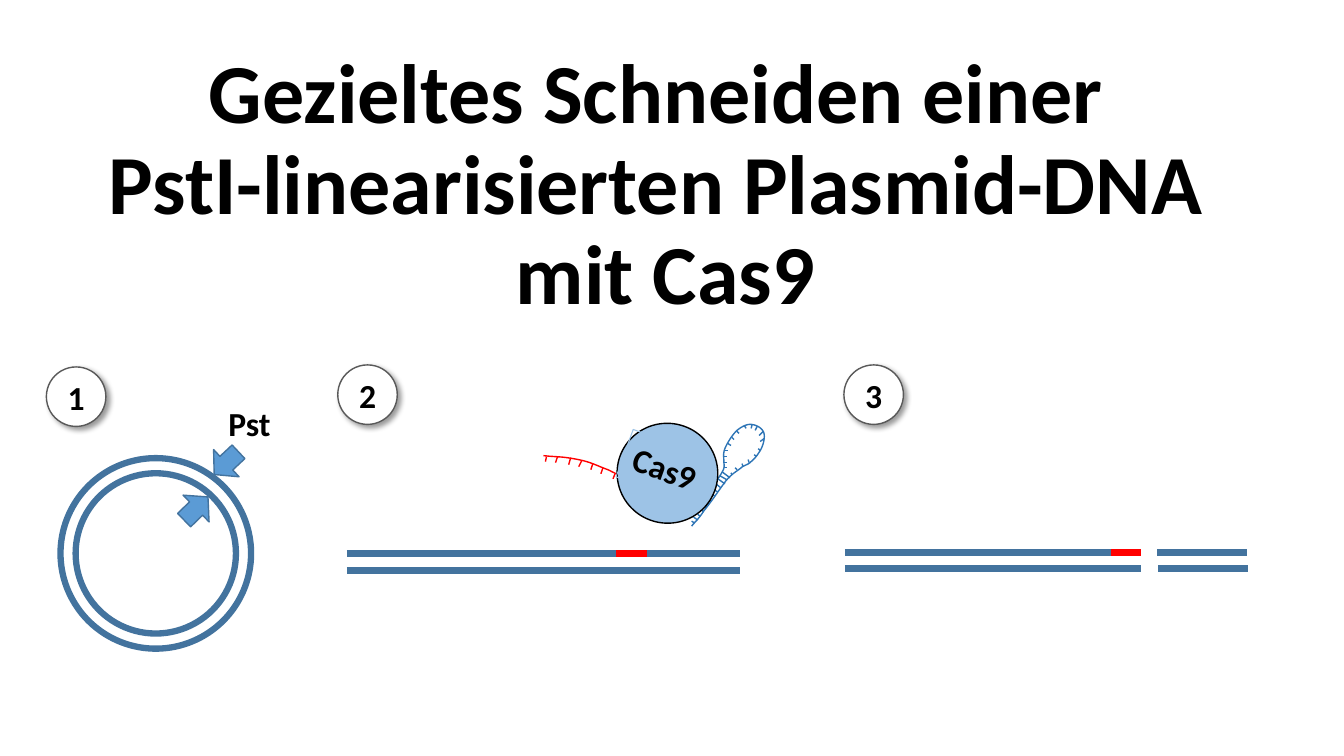
from lxml import etree
from pptx import Presentation
from pptx.dml.color import RGBColor
from pptx.enum.shapes import MSO_CONNECTOR, MSO_SHAPE
from pptx.enum.text import MSO_ANCHOR, PP_ALIGN
from pptx.oxml import parse_xml
from pptx.oxml.ns import nsdecls, qn
from pptx.util import Inches, Pt

BLACK = RGBColor(0, 0, 0)
WHITE = RGBColor(255, 255, 255)
RED = RGBColor(255, 0, 0)
GRAY = RGBColor(0x59, 0x59, 0x59)
DNA_BLUE = RGBColor(0x43, 0x73, 0x9E)
ARROW_BLUE = RGBColor(0x5B, 0x9B, 0xD5)
CAS9_BLUE = RGBColor(0x9D, 0xC3, 0xE6)
RNA_BLUE = RGBColor(0x2E, 0x75, 0xB6)

TITLE = "Gezieltes Schneiden einer \vPstI-linearisierten Plasmid-DNA \vmit Cas9"
BADGES = [("1", 0.46, 3.64), ("2", 3.35, 3.62), ("3", 8.37, 3.62)]
BADGE_SIZE = 0.59
RING_CENTER = (1.545, 5.49)
RING_SIZES = [1.89, 1.59]
CUT_ARROWS = [(2.06, 4.43, 46.9), (1.76, 4.88, 225.8)]
UNCUT_STRANDS = [
    (3.44, 7.34, 5.49, DNA_BLUE),
    (3.44, 7.34, 5.66, DNA_BLUE),
    (6.11, 6.42, 5.49, RED),
]
CUT_STRANDS = [
    (8.38, 11.32, 5.48, DNA_BLUE),
    (8.38, 11.32, 5.64, DNA_BLUE),
    (11.48, 12.37, 5.48, DNA_BLUE),
    (11.49, 12.38, 5.64, DNA_BLUE),
    (11.02, 11.32, 5.48, RED),
]
HAIRPIN = [
    (7.06, 4.82), (7.11, 4.77), (7.15, 4.71), (7.17, 4.67), (7.19, 4.63),
    (7.18, 4.61), (7.18, 4.58), (7.18, 4.54), (7.17, 4.5), (7.19, 4.45),
    (7.21, 4.4), (7.26, 4.32), (7.3, 4.28), (7.34, 4.24), (7.4, 4.21),
    (7.44, 4.21), (7.49, 4.21), (7.55, 4.24), (7.57, 4.28), (7.59, 4.31),
    (7.58, 4.38), (7.56, 4.43), (7.54, 4.48), (7.49, 4.55), (7.45, 4.58),
    (7.41, 4.62), (7.38, 4.61), (7.34, 4.65), (7.3, 4.68), (7.26, 4.7),
    (7.2, 4.77), (7.14, 4.85), (7.04, 5), (6.98, 5.07), (6.93, 5.15),
    (6.89, 5.18), (6.86, 5.22),
]
HAIRPIN_BASES = [
    (7.14, 4.72, 7.21, 4.76), (7.12, 4.75, 7.19, 4.8), (7.15, 4.84, 7.09, 4.79),
    (7.16, 4.68, 7.24, 4.74), (7.08, 4.86, 7.12, 4.88), (7.07, 4.91, 7.09, 4.92),
    (7.04, 4.96, 7.06, 4.97), (6.99, 5.03, 7.01, 5.03), (7.02, 5, 7.03, 5),
    (6.96, 5.06, 6.98, 5.08), (6.92, 5.1, 6.94, 5.12), (6.88, 5.13, 6.92, 5.16),
    (6.86, 5.17, 6.89, 5.19), (7.18, 4.64, 7.21, 4.64), (7.18, 4.59, 7.21, 4.59),
    (7.18, 4.53, 7.21, 4.53), (7.18, 4.47, 7.22, 4.47), (7.22, 4.4, 7.25, 4.42),
    (7.26, 4.34, 7.28, 4.36), (7.31, 4.28, 7.33, 4.3), (7.38, 4.22, 7.4, 4.25),
    (7.46, 4.21, 7.45, 4.25), (7.51, 4.23, 7.49, 4.27), (7.57, 4.28, 7.53, 4.32),
    (7.58, 4.35, 7.54, 4.38), (7.54, 4.47, 7.52, 4.45), (7.5, 4.53, 7.48, 4.51),
    (7.43, 4.59, 7.42, 4.56), (7.37, 4.63, 7.36, 4.6), (7.31, 4.66, 7.29, 4.64),
    (7.26, 4.71, 7.25, 4.69),
]
GUIDE = [
    (6.17, 4.73), (6.13, 4.71), (6.09, 4.69), (6.03, 4.66), (5.97, 4.64),
    (5.89, 4.6), (5.82, 4.58), (5.75, 4.56), (5.69, 4.55), (5.62, 4.54),
    (5.55, 4.53), (5.47, 4.53), (5.39, 4.52),
]
GUIDE_BASES = [
    (5.42, 4.53, 5.41, 4.58), (5.53, 4.53, 5.51, 4.59), (5.66, 4.54, 5.64, 4.61),
    (5.98, 4.64, 5.96, 4.7), (6.1, 4.7, 6.08, 4.75), (5.77, 4.57, 5.74, 4.63),
    (5.88, 4.6, 5.86, 4.66),
]
CURVE_STEPS = 8


def write(shape, text, size=24):
    frame = shape.text_frame
    frame.text = text
    frame.vertical_anchor = MSO_ANCHOR.MIDDLE
    paragraph = frame.paragraphs[0]
    paragraph.alignment = PP_ALIGN.CENTER
    paragraph.font.name = "Calibri"
    paragraph.font.size = Pt(size)
    paragraph.font.bold = True
    paragraph.font.color.rgb = BLACK
    return paragraph


def add_shape(shapes, kind, box, fill, line, width=1, rotation=0):
    shape = shapes.add_shape(kind, *map(Inches, box))
    shape.shadow.inherit = False
    shape.rotation = rotation
    if fill is None:
        shape.fill.background()
    else:
        shape.fill.solid()
        shape.fill.fore_color.rgb = fill
    shape.line.color.rgb = line
    shape.line.width = Pt(width)
    shape.text_frame.word_wrap = False
    return shape


def add_badge(shapes, number, left, top):
    badge = add_shape(shapes, MSO_SHAPE.OVAL, (left, top, BADGE_SIZE, BADGE_SIZE), WHITE, GRAY)
    write(badge, number)
    effects = badge._element.spPr.find(qn("a:effectLst"))
    effects.append(parse_xml(
        f'<a:outerShdw {nsdecls("a")} blurRad="50800" dist="38100" dir="2700000" '
        'algn="tl" rotWithShape="0"><a:srgbClr val="000000"><a:alpha val="40000"/>'
        '</a:srgbClr></a:outerShdw>'))


def add_strand(shapes, start, end, y, color):
    strand = shapes.add_connector(
        MSO_CONNECTOR.STRAIGHT, Inches(start), Inches(y), Inches(end), Inches(y))
    strand.line.color.rgb = color
    strand.line.width = Pt(4.5)
    etree.SubElement(strand._element.spPr, qn("a:effectLst"))


def curve_points(controls):
    points = [controls[0]]
    for i in range(0, len(controls) - 1, 3):
        a, b, c, d = controls[i:i + 4]
        for step in range(1, CURVE_STEPS + 1):
            t = step / CURVE_STEPS
            u = 1 - t
            points.append(tuple(
                u ** 3 * a[k] + 3 * u * u * t * b[k] + 3 * u * t * t * c[k] + t ** 3 * d[k]
                for k in (0, 1)))
    return points


def add_path(shapes, points, color):
    start, *rest = [(Inches(x), Inches(y)) for x, y in points]
    builder = shapes.build_freeform(*start)
    builder.add_line_segments(rest, close=False)
    shape = builder.convert_to_shape()
    shape.shadow.inherit = False
    shape.fill.background()
    shape.line.color.rgb = color
    shape.line.width = Pt(1)


def add_rna(shapes, backbone, bases, color):
    add_path(shapes, curve_points(backbone), color)
    for x1, y1, x2, y2 in bases:
        add_path(shapes, [(x1, y1), (x2, y2)], color)


def main():
    presentation = Presentation()
    presentation.slide_width = Inches(13.33)
    presentation.slide_height = Inches(7.5)
    slide = presentation.slides.add_slide(presentation.slide_layouts[5])
    title = slide.shapes.title
    title.left, title.top, title.width, title.height = map(Inches, (0, 0.13, 13.2, 3.45))
    write(title, TITLE, 60).line_spacing = 0.9

    plasmid, complex_, uncut, cut = [slide.shapes.add_group_shape().shapes for _ in range(4)]

    label = plasmid.add_textbox(*map(Inches, (2.16, 3.95, 0.63, 0.5)))
    label.text_frame.word_wrap = False
    write(label, "Pst")
    for left, top, angle in CUT_ARROWS:
        add_shape(plasmid, MSO_SHAPE.DOWN_ARROW, (left, top, 0.37, 0.33),
                  ARROW_BLUE, DNA_BLUE, rotation=angle)
    for size in RING_SIZES:
        x, y = (center - size / 2 for center in RING_CENTER)
        add_shape(plasmid, MSO_SHAPE.OVAL, (x, y, size, size), None, DNA_BLUE, 4.5)

    add_rna(complex_, HAIRPIN, HAIRPIN_BASES, RNA_BLUE)
    add_rna(complex_, GUIDE, GUIDE_BASES, RED)
    add_shape(complex_, MSO_SHAPE.OVAL, (6.12, 4.2, 1, 0.99), CAS9_BLUE, BLACK, rotation=19.9)
    cas9 = add_shape(complex_, MSO_SHAPE.RECTANGLE, (6.17, 4.39, 0.85, 0.5),
                     None, CAS9_BLUE, 0.75, 19.9)
    write(cas9, "Cas9")

    for shapes, strands in ((uncut, UNCUT_STRANDS), (cut, CUT_STRANDS)):
        for strand in strands:
            add_strand(shapes, *strand)
    for shapes, badge in zip((plasmid, uncut, cut), BADGES):
        add_badge(shapes, *badge)

    presentation.save("out.pptx")


if __name__ == "__main__":
    main()
